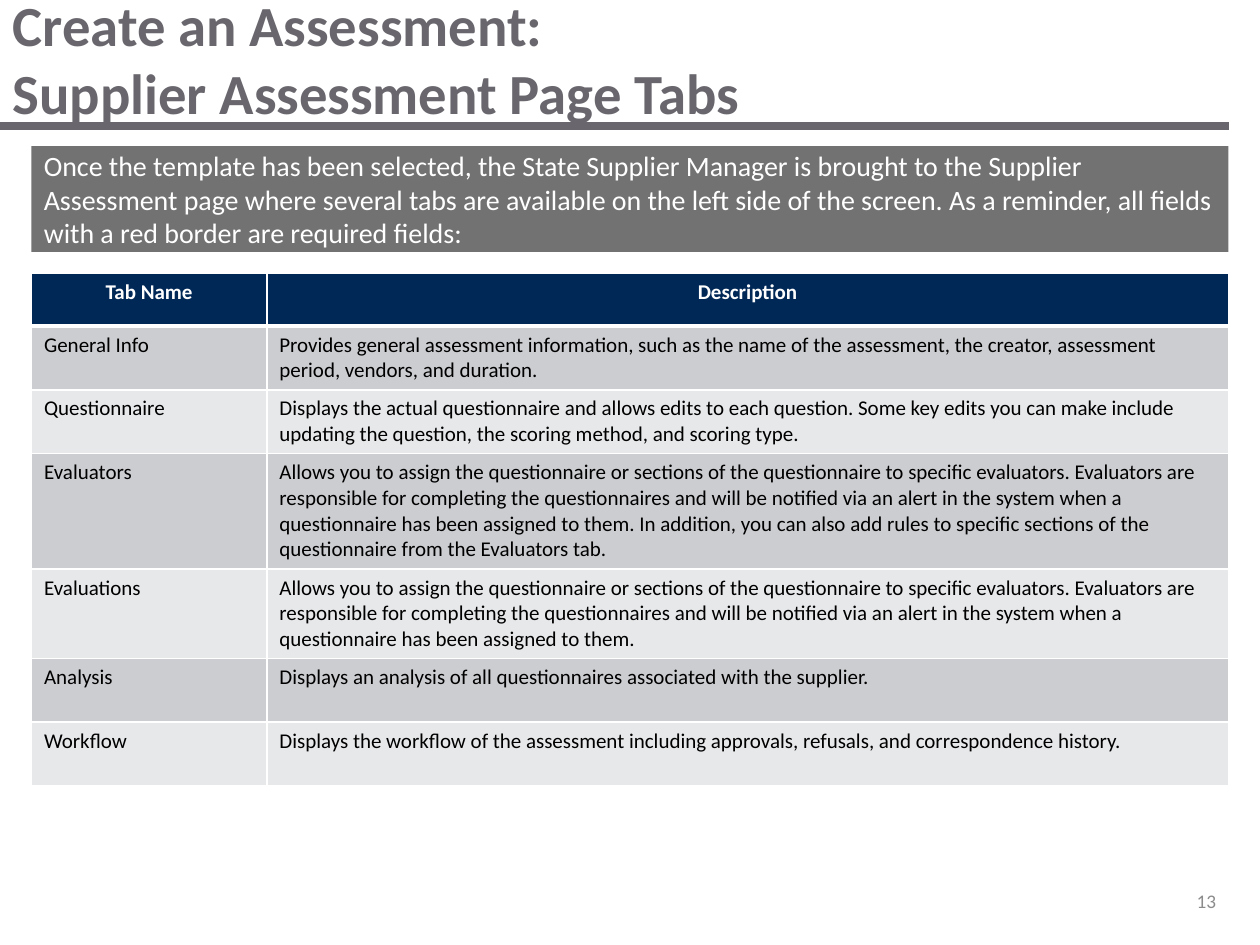
"""Build the slide that describes the tabs of the supplier assessment page."""
from copy import deepcopy

from pptx import Presentation
from pptx import util as u
from pptx.dml.color import RGBColor
from pptx.enum import shapes, text
from pptx.oxml import ns
from lxml import etree

WHITE = RGBColor(0xFF, 0xFF, 0xFF)
BLACK = RGBColor(0x00, 0x00, 0x00)
SLATE = RGBColor(0x69, 0x67, 0x6D)
GRAY = RGBColor(0x72, 0x72, 0x72)
PALE = RGBColor(0x8C, 0x8C, 0x8C)
NAVY = RGBColor(0x00, 0x28, 0x57)
BANDS = (RGBColor(0xE7, 0xE8, 0xEA), RGBColor(0xCC, 0xCD, 0xD1))

LEFT, RIGHT = 18, 702
WIDTH = RIGHT - LEFT

INTRO = (
    "Once the template has been selected, the State Supplier Manager is brought to the "
    "Supplier Assessment page where several tabs are available on the left side of the "
    "screen. As a reminder, all fields with a red border are required fields:"
)
ASSIGN = (
    "Allows you to assign the questionnaire or sections of the questionnaire to specific "
    "evaluators. Evaluators are responsible for completing the questionnaires and will be "
    "notified via an alert in the system when a questionnaire has been assigned to them."
)
ROWS = [
    ("Tab Name", "Description"),
    ("General Info",
     "Provides general assessment information, such as the name of the assessment, the "
     "creator, assessment period, vendors, and duration."),
    ("Questionnaire",
     "Displays the actual questionnaire and allows edits to each question. Some key edits "
     "you can make include updating the question, the scoring method, and scoring type."),
    ("Evaluators",
     ASSIGN + " In addition, you can also add rules to specific sections of the "
     "questionnaire from the Evaluators tab."),
    ("Evaluations", ASSIGN),
    ("Analysis",
     "Displays an analysis of all questionnaires associated with the supplier."),
    ("Workflow",
     "Displays the workflow of the assessment including approvals, refusals, and "
     "correspondence history."),
]
ROW_HEIGHTS = [30, 36.5, 36.5, 66, 51, 36.5, 36.5]


class Deck:
    """Hold the style and the current slide."""

    font = "Calibri"

    def __init__(self, prs):
        """Add a title-only slide to the presentation."""
        self.s = prs.slides.add_slide(prs.slide_layouts[5])

    def label(self, tf, words, size, color, bold=False, align=text.PP_ALIGN.LEFT,
              anchor=text.MSO_ANCHOR.MIDDLE):
        """Set and format the text of a frame."""
        tf.text = words
        tf.word_wrap = True
        tf.vertical_anchor = anchor
        p = tf.paragraphs[0]
        p.alignment = align
        for r in p.runs:
            r.font.name, r.font.size = self.font, u.Pt(size)
            r.font.bold, r.font.color.rgb = bold, color
        for br in p._p.findall(ns.qn("a:br")):
            br.append(deepcopy(p.runs[0]._r.rPr))
        return p

    def title(self, words, x, y, w, h):
        """Place and fill the title placeholder."""
        sp = self.s.shapes.title
        sp.left, sp.top, sp.width, sp.height = map(u.Pt, (x, y, w, h))
        sp.text_frame.auto_size = text.MSO_AUTO_SIZE.NONE
        self.label(sp.text_frame, words, 32.4, SLATE, bold=True)

    def rule(self, x1, x2, y):
        """Draw a thick horizontal line."""
        line = self.s.shapes.add_connector(
            shapes.MSO_CONNECTOR.STRAIGHT, *map(u.Pt, (x1, y, x2, y)))
        line.line.color.rgb, line.line.width = SLATE, u.Pt(5)
        etree.SubElement(line._element.spPr, ns.qn("a:effectLst"))

    def banner(self, words, x, y, w, h):
        """Draw a filled box with text."""
        sp = self.s.shapes.add_shape(
            shapes.MSO_SHAPE.RECTANGLE, *map(u.Pt, (x, y, w, h)))
        sp.shadow.inherit = False
        sp.fill.solid()
        sp.fill.fore_color.rgb = GRAY
        sp.line.fill.background()
        p = self.label(sp.text_frame, words, 16, WHITE)
        p.space_after = u.Pt(3)

    def number(self, words, x, y, w, h):
        """Add the page number."""
        sp = self.s.shapes.add_textbox(*map(u.Pt, (x, y, w, h)))
        self.label(sp.text_frame, words, 11, PALE, align=text.PP_ALIGN.RIGHT)

    def borders(self, cell, bottom, top):
        """Give a cell white borders."""
        tcPr = cell._tc.get_or_add_tcPr()
        for side, width in (("L", 1), ("R", 1), ("T", top), ("B", bottom)):
            ln = etree.SubElement(tcPr, ns.qn(f"a:ln{side}"), w=str(u.Pt(width)))
            fill = etree.SubElement(ln, ns.qn("a:solidFill"))
            etree.SubElement(fill, ns.qn("a:srgbClr"), val=str(WHITE))

    def table(self, rows, x, y, widths, heights):
        """Add a table with a header and banded rows."""
        table = self.s.shapes.add_table(
            len(rows), len(widths),
            *map(u.Pt, (x, y, sum(widths), sum(heights)))).table
        for col, width in zip(table.columns, widths):
            col.width = u.Pt(width)
        for i, (row, height) in enumerate(zip(rows, heights)):
            table.rows[i].height = u.Pt(height)
            head = i == 0
            for j, words in enumerate(row):
                cell = table.cell(i, j)
                self.borders(cell, bottom=3 if head else 1, top=3 if i == 1 else 1)
                cell.fill.solid()
                cell.fill.fore_color.rgb = NAVY if head else BANDS[i % 2]
                self.label(cell.text_frame, words, 12, WHITE if head else BLACK, head,
                           text.PP_ALIGN.CENTER if head else text.PP_ALIGN.LEFT,
                           text.MSO_ANCHOR.TOP)


def main():
    """Build and save the slide."""
    prs = Presentation()
    prs.slide_width, prs.slide_height = u.Pt(720), u.Pt(540)
    deck = Deck(prs)
    deck.rule(0, RIGHT, 72)
    deck.banner(INTRO, LEFT, 83.5, WIDTH, 60.5)
    deck.title("Create an Assessment: \vSupplier Assessment Page Tabs", 0, 0, 720, 66)
    deck.number("13", 582, 500.5, 120, 28.75)
    deck.table(ROWS, LEFT, 156.25, [134.5, WIDTH - 134.5], ROW_HEIGHTS)
    prs.save("out.pptx")


if __name__ == "__main__":
    main()
